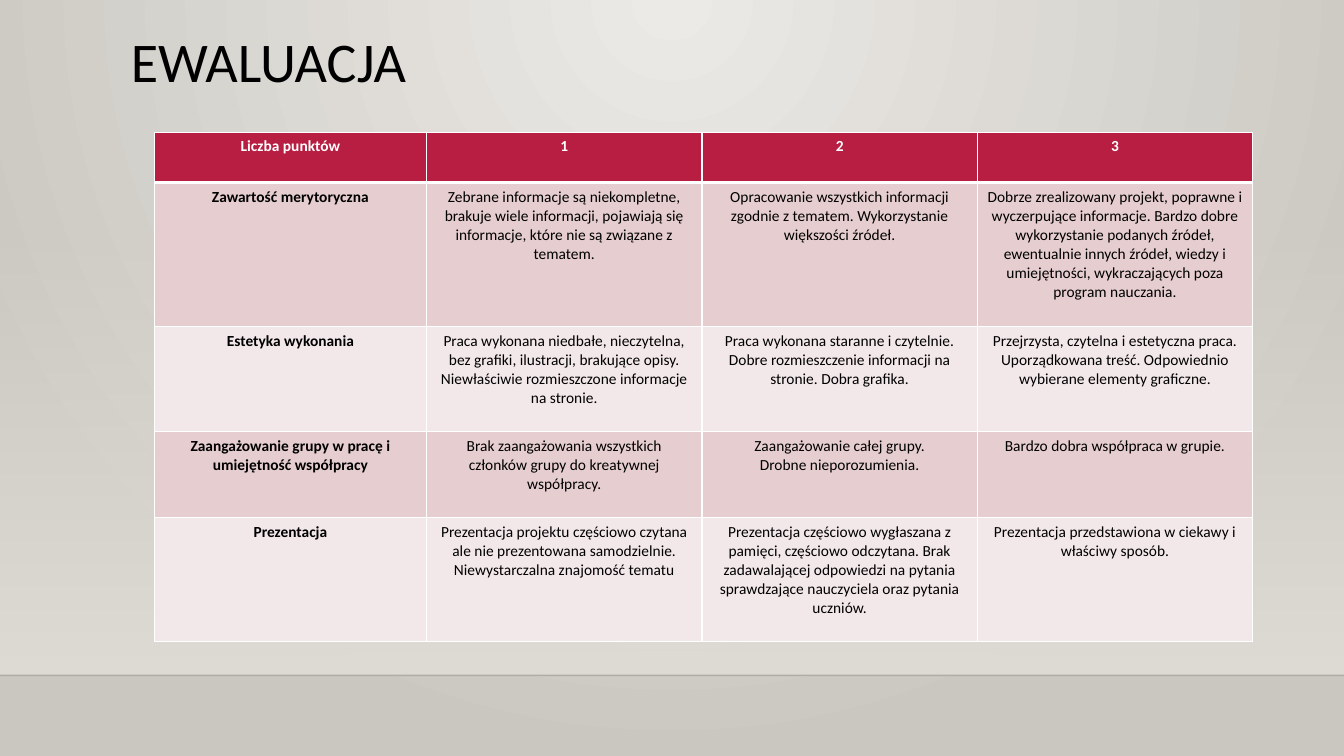
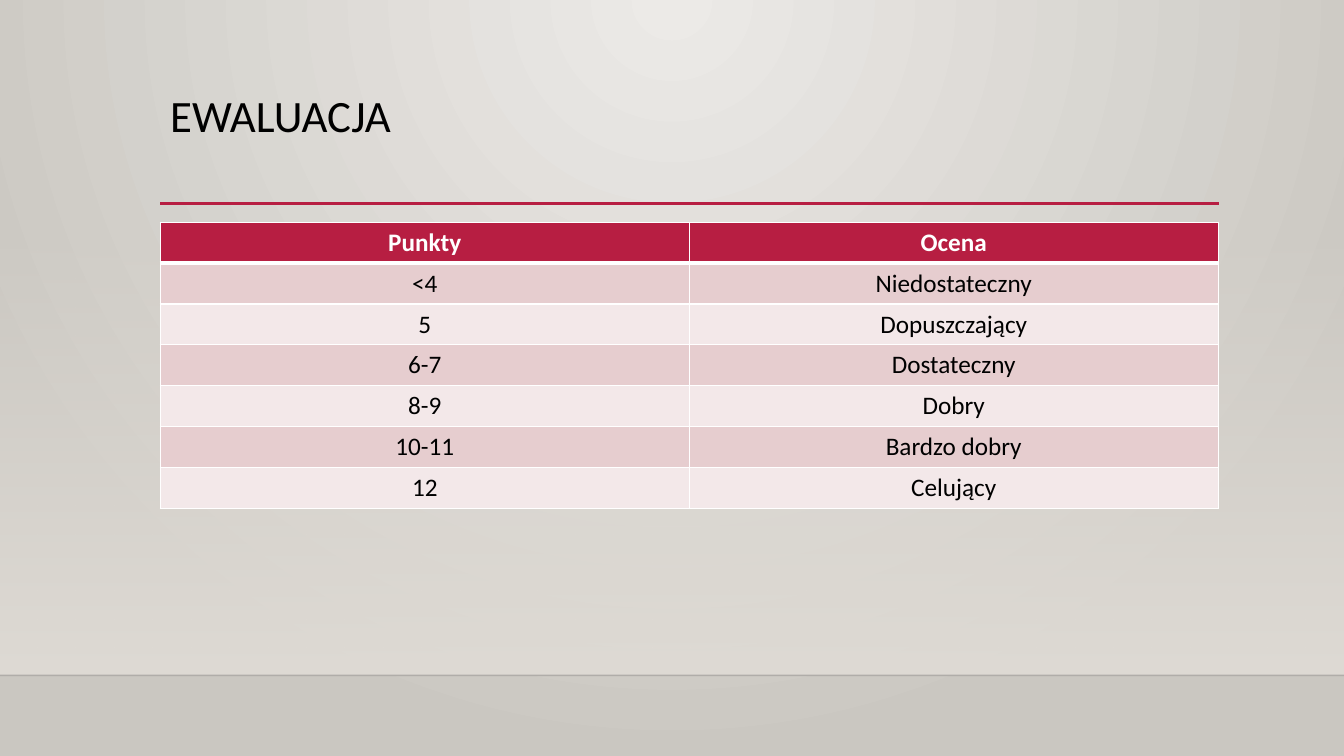
from lxml import etree
from pptx import Presentation
from pptx.dml.color import RGBColor
from pptx.enum import shapes, text
from pptx.oxml.ns import qn
from pptx.util import Cm, Pt

FONT = "Calibri"
COLOURS = {
    "accent": "B71E42", "band_odd": "E6CDCF", "band_even": "F3E8E9",
    "text": "000000", "white": "FFFFFF", "edge": "000001",
    "glow": "ECEAE7", "wall": "CAC7C1", "haze": "DFDBD5",
}
WIDTH, HEIGHT = 33.87, 19.05
FLOOR = 17.02
TITLE_SIZE = (26.67, 2.92)

CRITERIA = [
    ("Liczba punktów", "1", "2", "3"),
    ("Zawartość merytoryczna",
     "Zebrane informacje są niekompletne, brakuje wiele informacji, pojawiają się "
     "informacje, które nie są związane z tematem.",
     "Opracowanie wszystkich informacji zgodnie z tematem. Wykorzystanie większości źródeł.",
     "Dobrze zrealizowany projekt, poprawne i wyczerpujące informacje. Bardzo dobre "
     "wykorzystanie podanych źródeł, ewentualnie innych źródeł, wiedzy i umiejętności, "
     "wykraczających poza program nauczania."),
    ("Estetyka wykonania",
     "Praca wykonana niedbałe, nieczytelna, bez grafiki, ilustracji, brakujące opisy. "
     "Niewłaściwie rozmieszczone informacje na stronie.",
     "Praca wykonana staranne i czytelnie. Dobre rozmieszczenie informacji na stronie. "
     "Dobra grafika.",
     "Przejrzysta, czytelna i estetyczna praca. Uporządkowana treść. Odpowiednio "
     "wybierane elementy graficzne."),
    ("Zaangażowanie grupy w pracę i umiejętność współpracy",
     "Brak zaangażowania wszystkich członków grupy do kreatywnej współpracy.",
     "Zaangażowanie całej grupy.\nDrobne nieporozumienia.",
     "Bardzo dobra współpraca w grupie."),
    ("Prezentacja",
     "Prezentacja projektu częściowo czytana ale nie prezentowana samodzielnie. "
     "Niewystarczalna znajomość tematu",
     "Prezentacja częściowo wygłaszana z pamięci, częściowo odczytana. Brak "
     "zadawalającej odpowiedzi na pytania sprawdzające nauczyciela oraz pytania uczniów.",
     "Prezentacja przedstawiona w ciekawy i właściwy sposób."),
]
GRADES = [
    ("Punkty", "Ocena"),
    ("<4", "Niedostateczny"),
    ("5", "Dopuszczający"),
    ("6-7", "Dostateczny"),
    ("8-9", "Dobry"),
    ("10-11", "Bardzo dobry"),
    ("12", "Celujący"),
]
SLIDES = [
    {"title": "EWALUACJA", "at": (3.05, 0.74), "size": 40, "rule": False,
     "table": {"content": CRITERIA, "at": (3.89, 3.33), "size": 11, "bold_labels": True,
               "columns": [6.86, 6.94, 6.94, 6.94],
               "rows": [1.27, 3.62, 2.65, 2.17, 3.12]}},
    {"title": "EWALUACJA", "at": (4.04, 2.24), "size": 32, "rule": True,
     "table": {"content": GRADES, "at": (4.04, 5.6), "size": 18, "bold_labels": False,
               "columns": [13.33] * 2, "rows": [1.03] * len(GRADES)}},
]


def rgb(name):
    return RGBColor.from_string(COLOURS[name])


def add_alpha(parent, percent):
    """Set the opacity of the first RGB colour found under parent."""
    colour = next(parent.iter(qn("a:srgbClr")))
    etree.SubElement(colour, qn("a:alpha"), val=str(percent * 1000))


def set_gradient(fill, first, last):
    fill.gradient()
    for stop, position, name in zip(fill.gradient_stops, (0, 1), (first, last)):
        stop.position = position
        stop.color.rgb = rgb(name)


def paint_background(master):
    """Radial glow from the top centre, inherited by every slide."""
    set_gradient(master.background.fill, "glow", "wall")
    gradient = next(master.element.iter(qn("a:gradFill")))
    linear = gradient.find(qn("a:lin"))
    radial = etree.Element(qn("a:path"), path="circle")
    etree.SubElement(radial, qn("a:fillToRect"), l="43000", t="0", r="43000", b="100000")
    gradient.replace(linear, radial)


def write(frame, content, size, colour="text", bold=False, align=None, spacing=None):
    frame.word_wrap = True
    for index, line in enumerate(content.split("\n")):
        paragraph = frame.add_paragraph() if index else frame.paragraphs[0]
        paragraph.alignment = align
        paragraph.line_spacing = spacing
        run = paragraph.add_run()
        run.text = line
        run.font.name, run.font.size, run.font.bold = FONT, Pt(size), bold
        run.font.color.rgb = rgb(colour)


def add_rule(slide, left, right, top, colour, weight):
    rule = slide.shapes.add_connector(shapes.MSO_CONNECTOR.STRAIGHT,
                                      Cm(left), Cm(top), Cm(right), Cm(top))
    rule.line.color.rgb = rgb(colour)
    rule.line.width = Pt(weight)
    etree.SubElement(rule._element.spPr, qn("a:effectLst"))
    return rule


def add_backdrop(slide):
    """Haze fading in down to the floor edge."""
    top = 5.61
    haze = slide.shapes.add_shape(shapes.MSO_SHAPE.RECTANGLE,
                                  0, Cm(top), Cm(WIDTH), Cm(FLOOR - top))
    haze.shadow.inherit = False
    haze.line.fill.background()
    set_gradient(haze.fill, "haze", "haze")
    gradient = haze._element.spPr.find(qn("a:gradFill"))
    gradient.find(qn("a:lin")).set("ang", "5400000")
    add_alpha(gradient, 0)
    edge = add_rule(slide, 0, WIDTH, FLOOR, "edge", 1)
    add_alpha(edge._element.spPr, 20)


def set_borders(cell, top, bottom):
    """White borders; top and bottom are widths in points."""
    properties = cell._tc.get_or_add_tcPr()
    for side, weight in (("L", 1), ("R", 1), ("T", top), ("B", bottom)):
        line = etree.SubElement(properties, qn(f"a:ln{side}"), w=str(Pt(weight)))
        solid = etree.SubElement(line, qn("a:solidFill"))
        etree.SubElement(solid, qn("a:srgbClr"), val=COLOURS["white"])


def add_grid(slide, content, at, size, bold_labels, columns, rows):
    grid = slide.shapes.add_table(len(rows), len(columns), Cm(at[0]), Cm(at[1]),
                                  Cm(sum(columns)), Cm(sum(rows))).table
    for column, width in zip(grid.columns, columns):
        column.width = Cm(width)
    for r, (height, entries) in enumerate(zip(rows, content)):
        grid.rows[r].height = Cm(height)
        header = r == 0
        band = "accent" if header else "band_odd" if r % 2 else "band_even"
        for c, entry in enumerate(entries):
            cell = grid.cell(r, c)
            set_borders(cell, top=3 if r == 1 else 1, bottom=3 if header else 1)
            cell.fill.solid()
            cell.fill.fore_color.rgb = rgb(band)
            write(cell.text_frame, entry, size, colour="white" if header else "text",
                  bold=header or (bold_labels and c == 0), align=text.PP_ALIGN.CENTER)


def main():
    deck = Presentation()
    deck.slide_width, deck.slide_height = Cm(WIDTH), Cm(HEIGHT)
    paint_background(deck.slide_master)
    for page in SLIDES:
        slide = deck.slides.add_slide(deck.slide_layouts[6])
        add_backdrop(slide)
        if page["rule"]:
            add_rule(slide, 4.04, 30.73, 5.13, "accent", 2.5)
        title = slide.shapes.add_textbox(*map(Cm, page["at"] + TITLE_SIZE))
        write(title.text_frame, page["title"], page["size"], spacing=0.9)
        add_grid(slide, **page["table"])
    deck.save("out.pptx")


if __name__ == "__main__":
    main()
